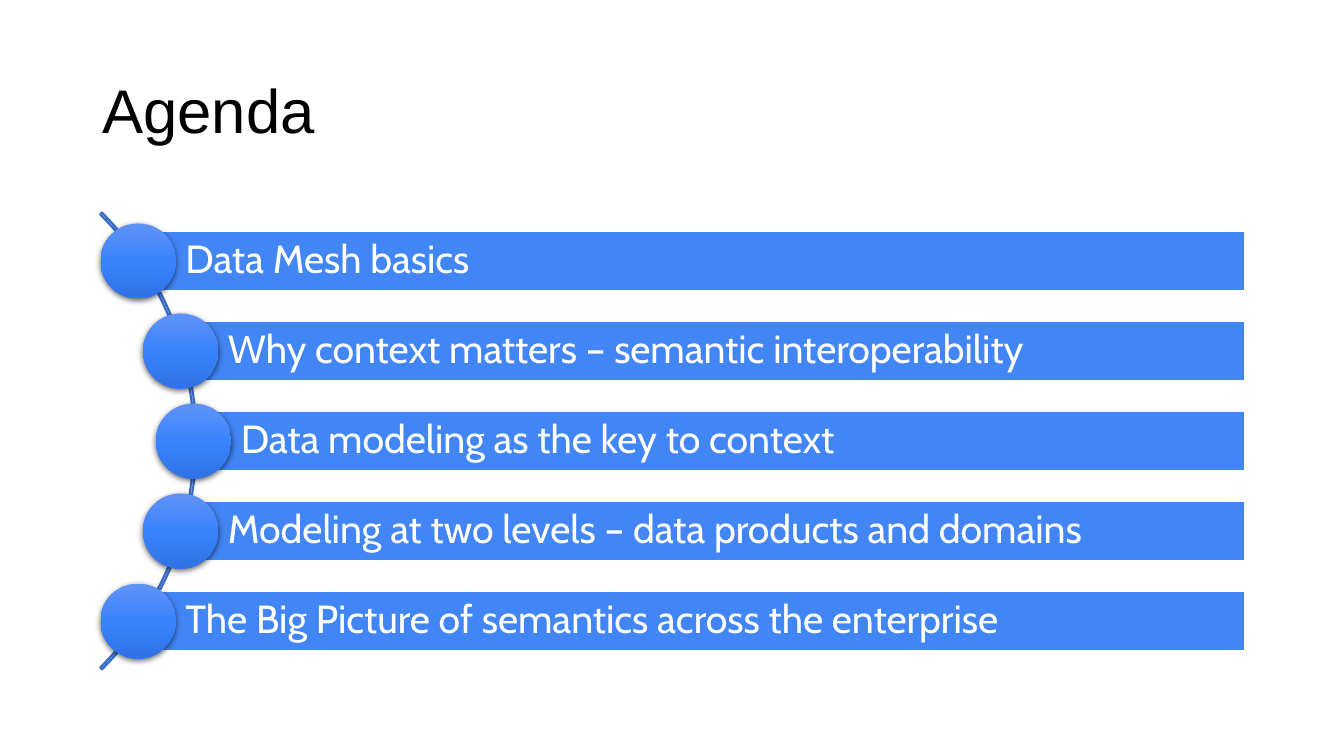
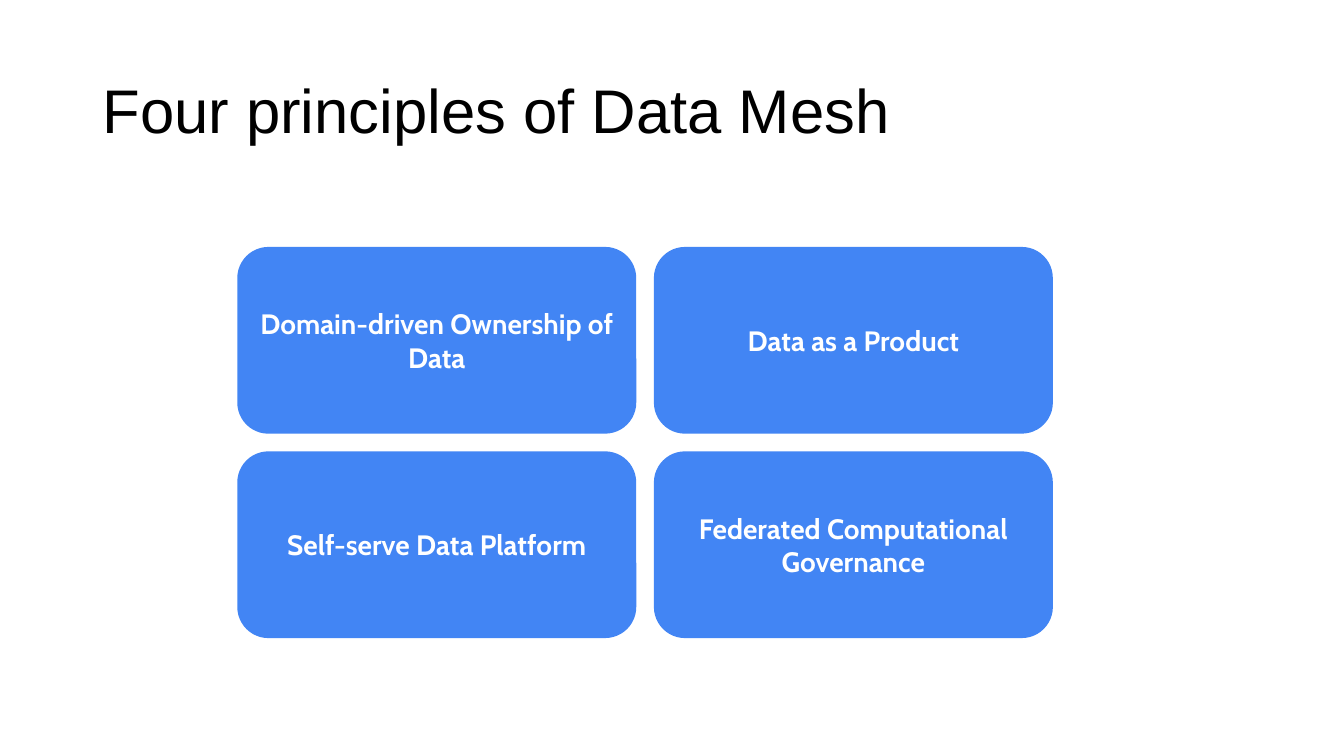
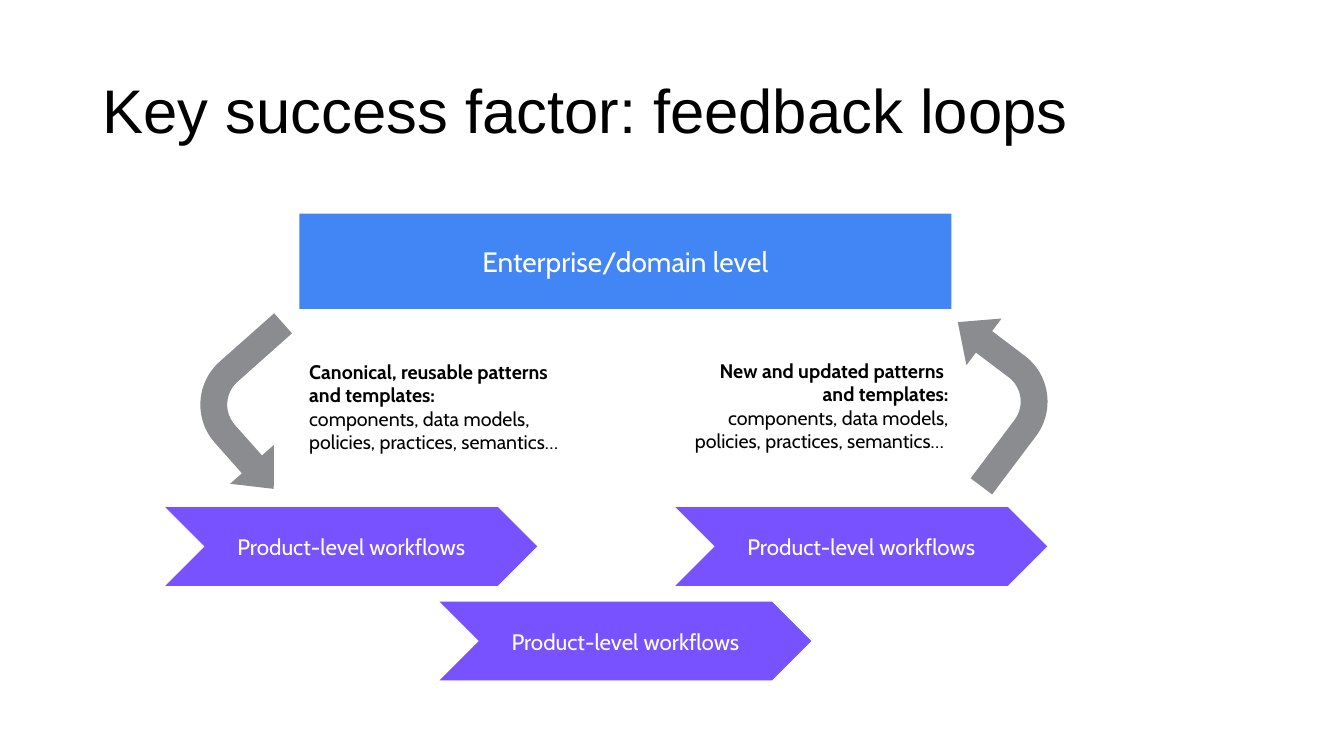
from dataclasses import dataclass
from math import sqrt
from pptx import Presentation
from pptx.dml.color import RGBColor as Rgb
from pptx.enum.shapes import MSO_SHAPE as Kind
from pptx.enum.text import MSO_ANCHOR as Anchor, MSO_AUTO_SIZE as Auto, PP_ALIGN as Align
from pptx.oxml import parse_xml
from pptx.oxml.ns import nsdecls, qn
from pptx.util import Pt


@dataclass(frozen=True)
class Theme:
    head: str = "Arial"
    body: str = "Cabin"
    black: str = "000000"
    white: str = "FFFFFF"
    blue: str = "4285F4"
    violet: str = "7752FE"
    gray: str = "8B8C8F"
    arc: str = "356BC3"
    ball: tuple = ((0, "6093F7"), (50, "3983FD"), (100, "2F73E5"))
    title: int = 44
    item: int = 28
    card: int = 20
    flow: int = 16
    note: int = 14


T = Theme()

AGENDA = [
    "Data Mesh basics",
    "Why context matters – semantic interoperability",
    "Data modeling as the key to context",
    "Modeling at two levels – data products and domains",
    "The Big Picture of semantics across the enterprise",
]
CARDS = [
    "Domain-driven Ownership of Data",
    "Data as a Product",
    "Self-serve Data Platform",
    "Federated Computational Governance",
]
LEVEL = "Enterprise/domain level"
FLOW = "Product-level workflows"
FLOWS = [(118.1, 362.2), (313.9, 429.8), (482.4, 362.2)]
LOOPS = [(141.1, 241.2, 228.4), (655.9, 231.1, 37)]
NOTES = [
    (213.8, 253.4, Align.LEFT, [
        ("Canonical, reusable patterns and templates:", True),
        ("components, data models, policies, practices, semantics…", False),
    ]),
    (474.5, 252.7, Align.RIGHT, [
        ("New and updated patterns ", True),
        ("and templates:", True),
        ("components, data models, policies, practices, semantics… ", False),
    ]),
]


def write(par, text, size, color, face=T.body, bold=False, align=Align.LEFT):
    par.alignment = align
    run = par.add_run()
    run.text = text
    font = run.font
    font.name, font.size, font.bold = face, Pt(size), bold
    font.color.rgb = Rgb.from_string(color)


def start(deck, text):
    slide = deck.slides.add_slide(deck.slide_layouts[5])
    title = slide.shapes.title
    title.left, title.top = Pt(66), Pt(28.8)
    title.width, title.height = Pt(828), Pt(104.4)
    frame = title.text_frame
    frame.auto_size = Auto.NONE
    frame.vertical_anchor = Anchor.MIDDLE
    par = frame.paragraphs[0]
    par.line_spacing = 0.9
    write(par, text, T.title, T.black, T.head)
    return slide


def draw(slide, kind, box, fill=None, line=None):
    shape = slide.shapes.add_shape(kind, *map(Pt, box))
    shape.shadow.inherit = False
    if fill:
        shape.fill.solid()
        shape.fill.fore_color.rgb = Rgb.from_string(fill)
    else:
        shape.fill.background()
    if line:
        shape.line.color.rgb = Rgb.from_string(line)
        shape.line.width = Pt(1.5)
    else:
        shape.line.fill.background()
    return shape


def label(shape, text, size, bold=False, align=Align.CENTER):
    frame = shape.text_frame
    frame.word_wrap = True
    frame.vertical_anchor = Anchor.MIDDLE
    write(frame.paragraphs[0], text, size, T.white, bold=bold, align=align)
    return frame


def gloss(shape):
    shape.fill.gradient()
    shape.fill.gradient_angle = 270
    props = shape._element.spPr
    stops = props.find(qn("a:gradFill")).find(qn("a:gsLst"))
    stops.clear()
    for pos, color in T.ball:
        stops.append(parse_xml(
            f'<a:gs {nsdecls("a")} pos="{pos * 1000}"><a:srgbClr val="{color}"/></a:gs>'))
    props.find(qn("a:effectLst")).append(parse_xml(
        f'<a:outerShdw {nsdecls("a")} blurRad="{Pt(4.5)}" dist="{Pt(1.5)}" dir="5400000" '
        f'algn="ctr" rotWithShape="0"><a:srgbClr val="{T.black}">'
        '<a:alpha val="63000"/></a:srgbClr></a:outerShdw>'))


def agenda(deck):
    slide = start(deck, "Agenda")
    hub, mid, size = -90.36, 315, 461.5
    arc = draw(slide, Kind.BLOCK_ARC, (hub - size / 2, mid - size / 2, size, size), line=T.arc)
    for i, value in enumerate((189, 27, 0.004)):
        arc.adjustments[i] = value
    reach, step, right, high, ball = 228.6, 64.3, 889.6, 43.2, 53.6
    for i, text in enumerate(AGENDA):
        drop = (i - (len(AGENDA) - 1) / 2) * step
        x, y = hub + sqrt(reach ** 2 - drop ** 2), mid + drop
        bar = draw(slide, Kind.RECTANGLE, (x, y - high / 2, right - x, high), T.blue, T.white)
        frame = label(bar, text, T.item, align=Align.LEFT)
        frame.margin_left = Pt(33.8)
        frame.margin_top = frame.margin_right = frame.margin_bottom = Pt(5.8)
        frame.paragraphs[0].line_spacing = 0.9
        gloss(draw(slide, Kind.OVAL, (x - ball / 2, y - ball / 2, ball, ball)))


def cards(deck):
    slide = start(deck, "Four principles of Data Mesh")
    wide, high, gap = 285, 133.4, 12.6
    for i, text in enumerate(CARDS):
        row, col = divmod(i, 2)
        box = (169.5 + col * (wide + gap), 176.4 + row * (high + gap), wide, high)
        label(draw(slide, Kind.ROUNDED_RECTANGLE, box, T.blue), text, T.card, True)


def loops(deck):
    slide = start(deck, "Key success factor: feedback loops")
    label(draw(slide, Kind.RECTANGLE, (213.8, 152.6, 465.8, 68), T.blue), LEVEL, T.card)
    for x, y in FLOWS:
        label(draw(slide, Kind.CHEVRON, (x, y, 265.7, 56.2), T.violet), FLOW, T.flow)
    for x, y, turn in LOOPS:
        arrow = draw(slide, Kind.BENT_ARROW, (x, y, 93.6, 104.4), T.gray)
        for i, value in enumerate((0.205, 0.223, 0.25, 0.438)):
            arrow.adjustments[i] = value
        arrow.rotation = turn
        arrow._element.spPr.find(qn("a:xfrm")).set("flipH", "1")
    for x, y, align, lines in NOTES:
        frame = slide.shapes.add_textbox(*map(Pt, (x, y, 210.2, 74.9))).text_frame
        frame.word_wrap = True
        for i, (text, bold) in enumerate(lines):
            par = frame.add_paragraph() if i else frame.paragraphs[0]
            write(par, text, T.note, T.black, bold=bold, align=align)


def main():
    deck = Presentation()
    deck.slide_width, deck.slide_height = Pt(960), Pt(540)
    for build in (agenda, cards, loops):
        build(deck)
    deck.save("out.pptx")


if __name__ == "__main__":
    main()
